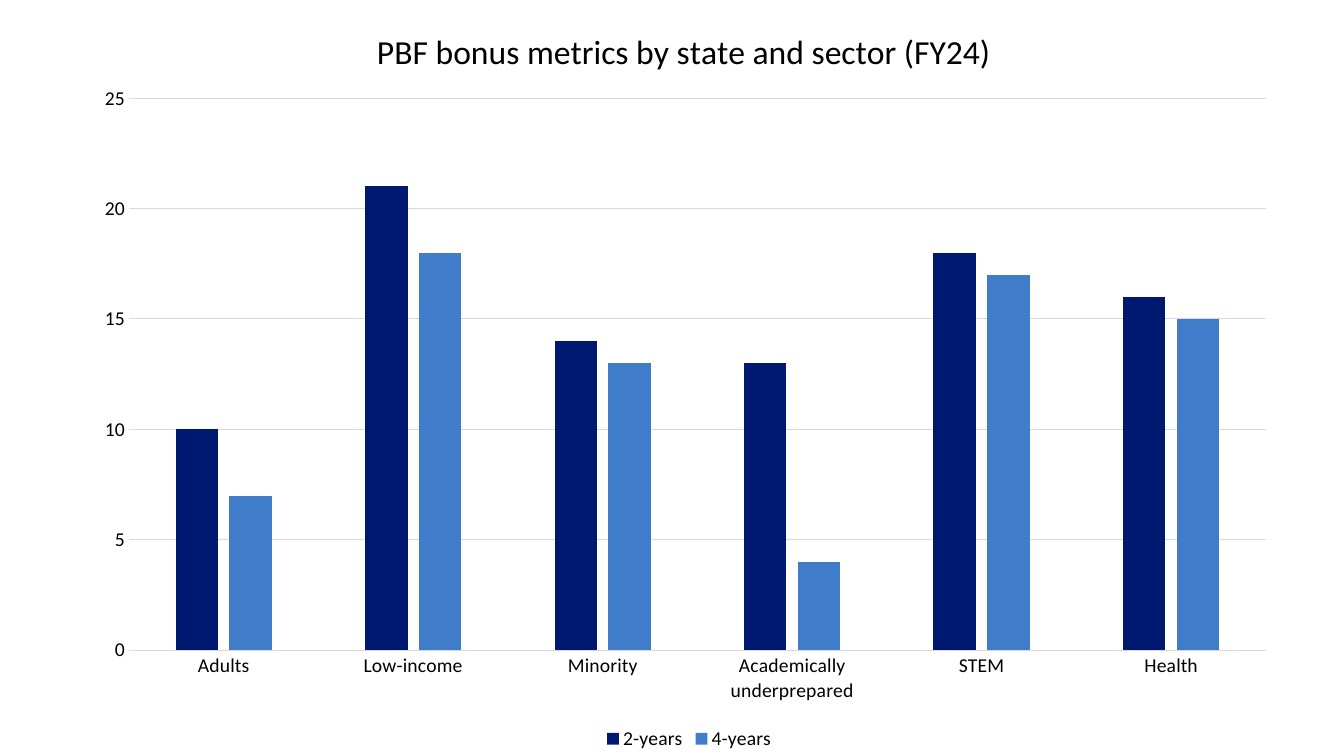
from dataclasses import dataclass

from lxml.etree import SubElement
from pptx import Presentation
from pptx.chart.data import CategoryChartData as Data
from pptx.dml.color import RGBColor as Color
from pptx.enum.chart import XL_CHART_TYPE as Kind
from pptx.enum.chart import XL_LEGEND_POSITION as Spot
from pptx.enum.chart import XL_TICK_MARK as Tick
from pptx.oxml.ns import qn
from pptx.util import Inches, Pt


@dataclass(frozen=True)
class Theme:
    """Hold the colours, font and type sizes."""

    font: str = "Calibri"
    ink: str = "000000"
    rule: str = "D9D9D9"
    bars: tuple = ("001970", "407CCA")
    title: int = 24
    label: int = 14
    thin: float = 0.75


THEME = Theme()
TITLE = "PBF bonus metrics by state and sector (FY24)"
GROUPS = ("Adults", "Low-income", "Minority", "Academically underprepared", "STEM", "Health")
SECTORS = {"2-years": (10, 21, 14, 13, 18, 16), "4-years": (7, 18, 13, 4, 17, 15)}


def style(font, size):
    """Apply the theme font at a given size."""
    font.name, font.size, font.bold = THEME.font, Pt(size), False
    font.color.rgb = Color.from_string(THEME.ink)


def rule(line):
    """Draw a line in the thin grey of the theme."""
    line.color.rgb = Color.from_string(THEME.rule)
    line.width = Pt(THEME.thin)


def place(node, index, **shares):
    """Fix a chart part at shares of the chart's size."""
    layout = node.find(qn("c:layout"))
    if layout is None:
        layout = SubElement(node, qn("c:layout"))
        node.insert(index, layout)
    manual = SubElement(layout, qn("c:manualLayout"))
    if "w" in shares:
        SubElement(manual, qn("c:layoutTarget")).set("val", "inner")
    for side in "xy":
        SubElement(manual, qn(f"c:{side}Mode")).set("val", "edge")
    for side, share in shares.items():
        SubElement(manual, qn(f"c:{side}")).set("val", str(share))


def head(chart):
    """Set the chart title."""
    chart.has_title = True
    frame = chart.chart_title.text_frame
    frame.text = TITLE
    style(frame.paragraphs[0].runs[0].font, THEME.title)
    place(chart.chart_title._element, 1, x=0.24, y=0.03)


def axes(chart):
    """Style both axes and the grid."""
    for axis in (chart.category_axis, chart.value_axis):
        axis.major_tick_mark = axis.minor_tick_mark = Tick.NONE
        style(axis.tick_labels.font, THEME.label)
    rule(chart.category_axis.format.line)
    value = chart.value_axis
    value.format.line.fill.background()
    value.minimum_scale, value.maximum_scale, value.major_unit = 0, 25, 5
    rule(value.major_gridlines.format.line)


def key(chart):
    """Put the legend at the foot of the chart."""
    chart.has_legend = True
    legend = chart.legend
    legend.position = Spot.BOTTOM
    legend.include_in_layout = False
    style(legend.font, THEME.label)
    place(legend._element, 1, x=0.43, y=0.96)


def bars(slide, box):
    """Build the sector column chart in a box."""
    data = Data()
    data.categories = GROUPS
    for name, counts in SECTORS.items():
        data.add_series(name, counts)
    chart = slide.shapes.add_chart(Kind.COLUMN_CLUSTERED, *box, data).chart
    style(chart.font, THEME.label)
    plot = chart.plots[0]
    plot.gap_width, plot.overlap, plot.vary_by_categories = 219, -27, False
    for series, tint in zip(plot.series, THEME.bars):
        series.format.fill.solid()
        series.format.fill.fore_color.rgb = Color.from_string(tint)
    head(chart)
    axes(chart)
    key(chart)
    area = chart._chartSpace.chart.plotArea
    place(area, 0, x=0.04, y=0.13, w=0.94, h=0.73)


def main():
    """Build and save the deck."""
    deck = Presentation()
    deck.slide_width, deck.slide_height = Inches(13.33), Inches(7.5)
    wide, high = deck.slide_width, deck.slide_height
    slide = deck.slides.add_slide(deck.slide_layouts[6])
    bars(slide, (int(wide * 0.06), 0, int(wide * 0.9), high))
    deck.save("out.pptx")


if __name__ == "__main__":
    main()
